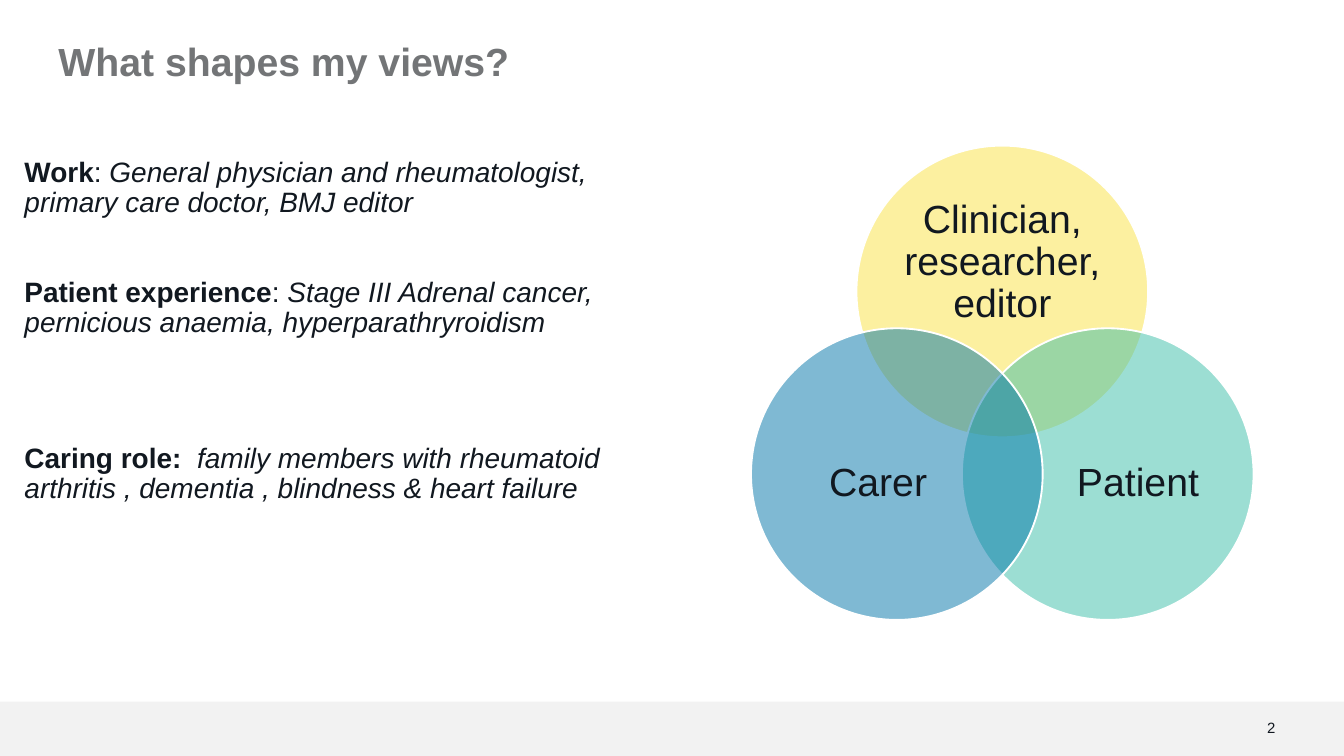
import math
from typing import NamedTuple

from lxml import etree
from pptx import Presentation
from pptx import util as u
from pptx.dml.color import RGBColor
from pptx.enum import shapes, text
from pptx.oxml.ns import qn

INK = RGBColor(0x11, 0x18, 0x20)
TITLE_GREY = RGBColor(0x73, 0x75, 0x77)
FOOTER_GREY = RGBColor(0xF2, 0xF2, 0xF2)
WHITE = RGBColor(0xFF, 0xFF, 0xFF)
YELLOW = RGBColor(0xFA, 0xE3, 0x42)
TEAL = RGBColor(0x3B, 0xBE, 0xA9)
BLUE = RGBColor(0x00, 0x75, 0xA9)

FONT = "Arial"
GRID_CELL = u.Inches(0.1)
COLUMNS, ROWS = 100, 56.25

VENN_COLUMN, VENN_ROW = 74.58, 30.75
VENN_RADIUS = 9.06
CIRCLE_SIZE = 21.7


class Area(NamedTuple):
    column: float
    row: float
    columns: float
    rows: float

    def lengths(self) -> tuple[int, ...]:
        return tuple(round(value * GRID_CELL) for value in self)


class Circle(NamedTuple):
    label: str
    angle: float
    color: RGBColor
    label_shift: tuple[float, float]
    label_size: tuple[float, float]


class Statement(NamedTuple):
    heading: str
    separator: str
    detail: str
    space_before: float


CIRCLES = [
    Circle("Clinician, researcher, editor", -90, YELLOW, (0, -2.15), (15.9, 9.8)),
    Circle("Patient", 30, TEAL, (2.25, 0.75), (13, 12)),
    Circle("Carer", 150, BLUE, (-1.4, 0.75), (14.9, 12)),
]

STATEMENTS = [
    Statement("Work", ": ",
              "General physician and rheumatologist, primary care doctor, BMJ editor", 0),
    Statement("Patient experience", ": ",
              "Stage III Adrenal cancer, pernicious anaemia, hyperparathryroidism", 32),
    Statement("Caring role:  ", "",
              "family members with rheumatoid arthritis , dementia , blindness & heart failure", 56.5),
]


def centred(column: float, row: float, columns: float, rows: float) -> Area:
    return Area(column - columns / 2, row - rows / 2, columns, rows)


def set_frame(frame, side: float, end: float, anchor=text.MSO_ANCHOR.TOP) -> None:
    frame.word_wrap = True
    frame.auto_size = text.MSO_AUTO_SIZE.NONE
    frame.vertical_anchor = anchor
    frame.margin_left = frame.margin_right = u.Inches(side)
    frame.margin_top = frame.margin_bottom = u.Inches(end)


def set_paragraph(paragraph, size: float, color: RGBColor = INK,
                  alignment=text.PP_ALIGN.LEFT) -> None:
    paragraph.alignment = alignment
    paragraph.line_spacing = 0.9
    paragraph.font.name = FONT
    paragraph.font.size = u.Pt(size)
    paragraph.font.color.rgb = color


def add_filled_shape(slide, kind, area: Area, color: RGBColor):
    shape = slide.shapes.add_shape(kind, *area.lengths())
    shape.shadow.inherit = False
    shape.fill.solid()
    shape.fill.fore_color.rgb = color
    shape.line.fill.background()
    return shape


def add_title(slide) -> None:
    title = slide.shapes.title
    title.left, title.top, title.width, title.height = Area(3.65, 2.75, 92.7, 7.5).lengths()
    set_frame(title.text_frame, 0.07, 0.04)
    title.text_frame.text = "What shapes my views?"
    paragraph = title.text_frame.paragraphs[0]
    set_paragraph(paragraph, 21, TITLE_GREY)
    paragraph.font.bold = True


def add_footer(slide) -> None:
    add_filled_shape(slide, shapes.MSO_SHAPE.RECTANGLE,
                     Area(0, 52.2, COLUMNS, ROWS - 52.2), FOOTER_GREY)
    number = slide.shapes.add_textbox(*Area(88.1, 53.1, 7.5, 2.1).lengths())
    set_frame(number.text_frame, 0.07, 0.04)
    number.text_frame.text = "2"
    paragraph = number.text_frame.paragraphs[0]
    set_paragraph(paragraph, 8, alignment=text.PP_ALIGN.RIGHT)
    paragraph.line_spacing = 1.0


def add_circle(slide, circle: Circle) -> None:
    angle = math.radians(circle.angle)
    column = VENN_COLUMN + VENN_RADIUS * math.cos(angle)
    row = VENN_ROW + VENN_RADIUS * math.sin(angle)
    shape = add_filled_shape(slide, shapes.MSO_SHAPE.OVAL,
                             centred(column, row, CIRCLE_SIZE, CIRCLE_SIZE), circle.color)
    shape.line.color.rgb = WHITE
    shape.line.width = u.Pt(1)
    fill_color = shape.element.spPr.find(qn("a:solidFill"))[0]
    etree.SubElement(fill_color, qn("a:alpha"), val="50000")

    shift_columns, shift_rows = circle.label_shift
    area = centred(column + shift_columns, row + shift_rows, *circle.label_size)
    label = slide.shapes.add_textbox(*area.lengths())
    set_frame(label.text_frame, 0, 0, text.MSO_ANCHOR.MIDDLE)
    label.text_frame.text = circle.label
    set_paragraph(label.text_frame.paragraphs[0], 21, alignment=text.PP_ALIGN.CENTER)


def add_statements(slide, statements: list[Statement]) -> None:
    box = slide.shapes.add_textbox(*Area(1.12, 11.35, 46.5, 33.5).lengths())
    frame = box.text_frame
    set_frame(frame, 0.07, 0.04)
    for index, statement in enumerate(statements):
        paragraph = frame.add_paragraph() if index else frame.paragraphs[0]
        set_paragraph(paragraph, 15)
        paragraph.space_before = u.Pt(statement.space_before)
        heading = paragraph.add_run()
        heading.text = statement.heading
        heading.font.bold = True
        if statement.separator:
            paragraph.add_run().text = statement.separator
        detail = paragraph.add_run()
        detail.text = statement.detail
        detail.font.italic = True


def main() -> None:
    presentation = Presentation()
    presentation.slide_width = round(COLUMNS * GRID_CELL)
    presentation.slide_height = round(ROWS * GRID_CELL)
    slide = presentation.slides.add_slide(presentation.slide_layouts.get_by_name("Title Only"))
    add_footer(slide)
    add_title(slide)
    for circle in CIRCLES:
        add_circle(slide, circle)
    add_statements(slide, STATEMENTS)
    presentation.save("out.pptx")


if __name__ == "__main__":
    main()
